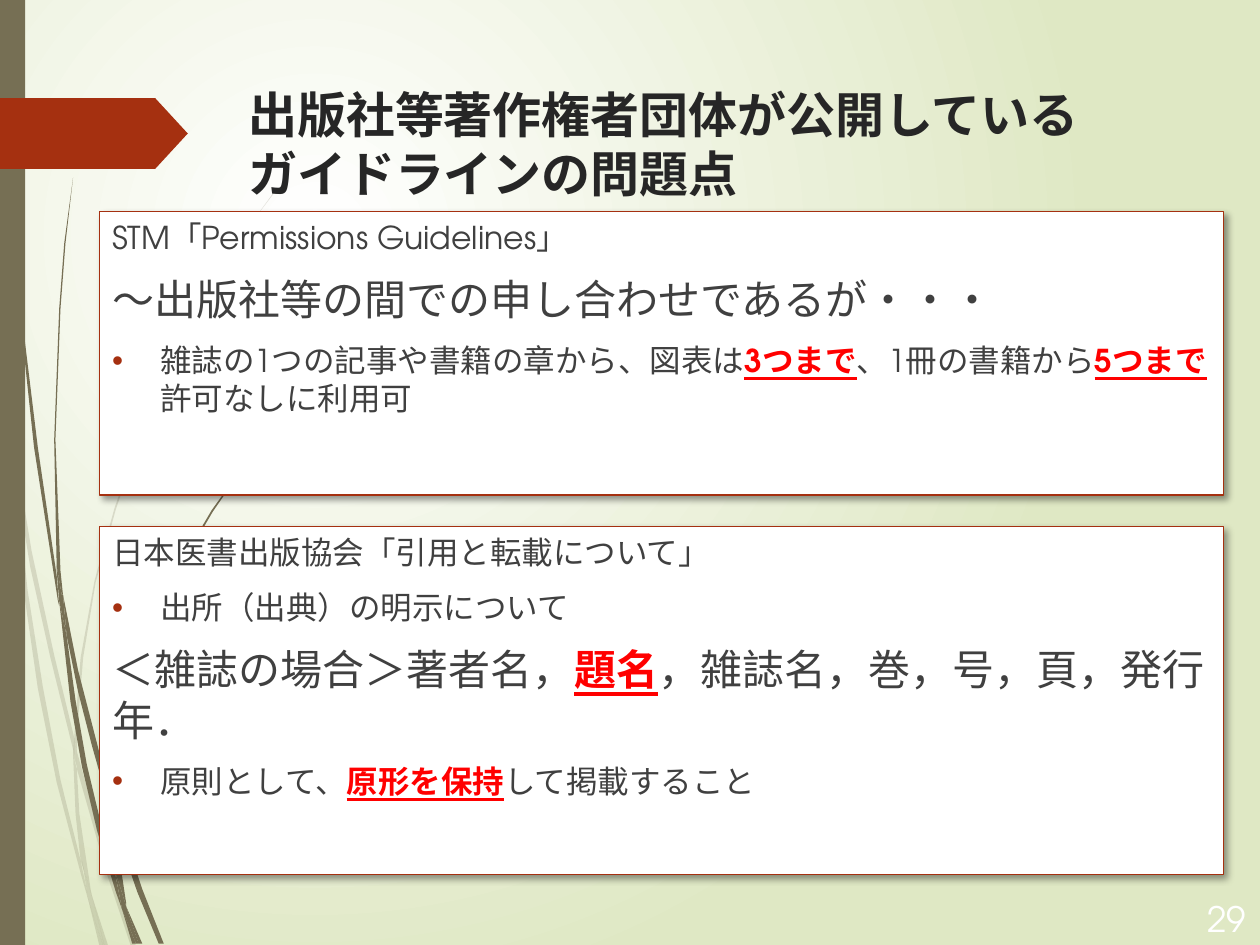
import lxml.etree
import pptx
import pptx.dml.color
import pptx.enum.shapes
import pptx.enum.text
import pptx.oxml.ns
import pptx.util

PX = 9144
FONT = "TeX Gyre Adventor"
OLIVE, RUST, RED, GRAY = "766F54", "A53010", "FF0000", "404040"
qn = pptx.oxml.ns.qn
color = pptx.dml.color.RGBColor.from_string


def child(parent, tag, **attributes):
    return lxml.etree.SubElement(parent, qn(tag), attributes)


def add_run(paragraph, text, size, hex_color, bold=False, underline=False):
    run = paragraph.add_run()
    run.text = text
    run.font.name = FONT
    run.font.size = pptx.util.Pt(size)
    run.font.bold = bold
    run.font.underline = underline
    run.font.color.rgb = color(hex_color)
    child(run.font._element, "a:ea", typeface=FONT)


presentation = pptx.Presentation()
presentation.slide_width = 1000 * PX
presentation.slide_height = 750 * PX
slide = presentation.slides.add_slide(presentation.slide_layouts[3])
title, upper_box, lower_box = slide.placeholders

background = slide.background.fill
background.gradient()
for stop, hex_color in zip(background.gradient_stops, ("FFFFFF", "DFE8C4")):
    stop.color.rgb = color(hex_color)
gradient = slide.element.find(".//" + qn("a:gradFill"))
gradient.remove(gradient.find(qn("a:lin")))
circle = child(gradient, "a:path", path="circle")
child(circle, "a:fillToRect", l="50000", t="50000", r="100000", b="100000")

pale_wisps = [
    [(8, 350), (6, 322), (0, 282), (0, 299), (7, 344)],
    [(40, 522), (59, 599), (59, 586), (43, 520), (25, 437), (10, 345), (12, 376), (24, 450)],
    [(64, 607), (61, 596), (61, 610), (85, 694), (104, 751), (108, 751), (88, 692)],
    [(83, 751), (86, 751), (73, 711)],
    [(64, 683), (48, 619), (34, 545), (22, 469), (12, 376), (8, 350), (19, 470), (30, 546),
     (45, 621), (64, 693), (70, 714), (69, 707)],
    [(58, 599), (60, 646), (64, 683), (67, 692), (73, 711), (72, 706), (63, 646), (61, 610)],
    [(61, 584), (66, 522), (76, 462), (92, 404), (111, 349), (133, 296), (159, 245), (187, 198),
     (201, 175), (217, 154), (217, 153), (201, 175), (186, 197), (158, 244), (132, 295),
     (110, 348), (91, 403), (75, 461), (64, 522), (59, 584), (59, 586), (61, 596)],
    [(70, 714), (79, 751), (82, 751)],
    [(61, 608), (61, 596), (59, 586), (58, 599)],
    [(67, 692), (65, 683), (69, 707), (70, 714), (82, 751), (83, 751), (73, 711)],
]
dark_wisps = [
    [(5, 110), (14, 233), (27, 355), (46, 477), (47, 481), (45, 457), (30, 355), (15, 232),
     (6, 109), (4, 48), (3, 0), (2, 0), (3, 48)],
    [(73, 592), (88, 645), (88, 633), (77, 590), (62, 532), (50, 472), (53, 505), (62, 549)],
    [(94, 649), (91, 641), (91, 656), (109, 708), (126, 749), (130, 749), (113, 706)],
    [(91, 691), (81, 657), (69, 607), (60, 556), (53, 505), (47, 477), (56, 557), (65, 608),
     (77, 659), (92, 708), (97, 722), (96, 717)],
    [(50, 472), (48, 453), (44, 349), (48, 245), (52, 193), (58, 141), (51, 193), (47, 245),
     (43, 349), (45, 449), (49, 472)],
    [(110, 749), (113, 749), (100, 719)],
    [(47, 477), (53, 505), (50, 472), (49, 472), (45, 449), (45, 453)],
    [(91, 633), (95, 592), (103, 552), (116, 513), (131, 476), (149, 440), (169, 406), (191, 374),
     (203, 359), (216, 344), (215, 344), (203, 358), (191, 373), (168, 405), (148, 439),
     (129, 474), (114, 512), (101, 551), (92, 591), (88, 631), (91, 641)],
    [(97, 722), (105, 749), (108, 749)],
    [(88, 645), (91, 691), (96, 706), (100, 719), (100, 716), (91, 656), (90, 651)],
    [(96, 706), (91, 691), (96, 717), (97, 722), (108, 749), (110, 749), (100, 719)],
]
for wisps, opacity in ((pale_wisps, 20), (dark_wisps, 100)):
    for points in wisps:
        builder = slide.shapes.build_freeform(*points[0], scale=PX)
        builder.add_line_segments(points[1:], close=True)
        wisp = builder.convert_to_shape()
        wisp.shadow.inherit = False
        wisp.line.fill.background()
        wisp.fill.solid()
        wisp.fill.fore_color.rgb = color(OLIVE)
        fill_color = wisp.element.spPr.find(".//" + qn("a:srgbClr"))
        child(fill_color, "a:alpha", val=str(opacity * 1000))

shape_types = pptx.enum.shapes.MSO_SHAPE
for shape_type, left, top, width, height, hex_color in (
    (shape_types.RECTANGLE, 0, 0, 20, 750, OLIVE),
    (shape_types.PENTAGON, 0, 78, 149, 56, RUST),
):
    shape = slide.shapes.add_shape(shape_type, left * PX, top * PX, width * PX, height * PX)
    shape.shadow.inherit = False
    shape.line.fill.background()
    shape.fill.solid()
    shape.fill.fore_color.rgb = color(hex_color)
    if shape_type == shape_types.PENTAGON:
        shape.adjustments[0] = 0.46

number = slide.shapes.add_textbox(900 * PX, 709 * PX, 99 * PX, 40 * PX)
number.text_frame.word_wrap = True
number.text_frame.vertical_anchor = pptx.enum.text.MSO_ANCHOR.MIDDLE
number.text_frame.paragraphs[0].alignment = pptx.enum.text.PP_ALIGN.RIGHT
add_run(number.text_frame.paragraphs[0], "29", 20, "FFFFFF")

for placeholder, left, top, width, height in (
    (title, 187, 60, 784, 108),
    (upper_box, 79, 168, 892, 225),
    (lower_box, 79, 418, 892, 276),
):
    placeholder.left, placeholder.top = left * PX, top * PX
    placeholder.width, placeholder.height = width * PX, height * PX
    placeholder.text_frame.word_wrap = True
    placeholder.text_frame.auto_size = pptx.enum.text.MSO_AUTO_SIZE.NONE
    placeholder.element.getparent().append(placeholder.element)

title.text_frame.vertical_anchor = pptx.enum.text.MSO_ANCHOR.MIDDLE
heading = title.text_frame.paragraphs[0]
heading.alignment = pptx.enum.text.PP_ALIGN.LEFT
add_run(heading, "出版社等著作権者団体が公開している", 28, "262626", bold=True)
heading.add_line_break()
add_run(heading, "ガイドラインの問題点", 28, "262626", bold=True)

upper_lines = [
    (18, False, ["STM「Permissions Guidelines」"]),
    (24, False, ["～出版社等の間での申し合わせであるが・・・"]),
    (18, True, ["雑誌の1つの記事や書籍の章から、図表は", "3つまで", "、1冊の書籍から", "5つまで",
                "許可なしに利用可"]),
]
lower_lines = [
    (18, False, ["日本医書出版協会「引用と転載について」"]),
    (18, True, ["出所（出典）の明示について"]),
    (24, False, ["＜雑誌の場合＞著者名，", "題名", "，雑誌名，巻，号，頁，発行年．"]),
    (18, True, ["原則として、", "原形を保持", "して掲載すること"]),
]
for box, lines in ((upper_box, upper_lines), (lower_box, lower_lines)):
    box.fill.solid()
    box.fill.fore_color.rgb = color("FFFFFF")
    box.line.color.rgb = color(RUST)
    box.line.width = pptx.util.Pt(0.75)
    box.shadow.inherit = False
    effects = box.element.spPr.find(qn("a:effectLst"))
    shadow = child(effects, "a:outerShdw", blurRad=str(pptx.util.Pt(4)),
                   dist=str(pptx.util.Pt(3)), dir="2700000", algn="tl", rotWithShape="0")
    child(child(shadow, "a:srgbClr", val="000000"), "a:alpha", val="40000")
    box.text_frame.vertical_anchor = pptx.enum.text.MSO_ANCHOR.TOP
    for index, (size, bulleted, texts) in enumerate(lines):
        paragraph = box.text_frame.add_paragraph() if index else box.text_frame.paragraphs[0]
        paragraph.space_before = pptx.util.Pt(10)
        properties = paragraph._p.get_or_add_pPr()
        indent = 38 * PX if bulleted else 0
        properties.set("marL", str(indent))
        properties.set("indent", str(-indent))
        if bulleted:
            child(child(properties, "a:buClr"), "a:srgbClr", val=RUST)
            child(properties, "a:buFont", typeface="Arial")
            child(properties, "a:buChar", char="•")
        else:
            child(properties, "a:buNone")
        for position, text in enumerate(texts):
            marked = position % 2 == 1
            add_run(paragraph, text, size, RED if marked else GRAY, marked, marked)

presentation.save("out.pptx")
